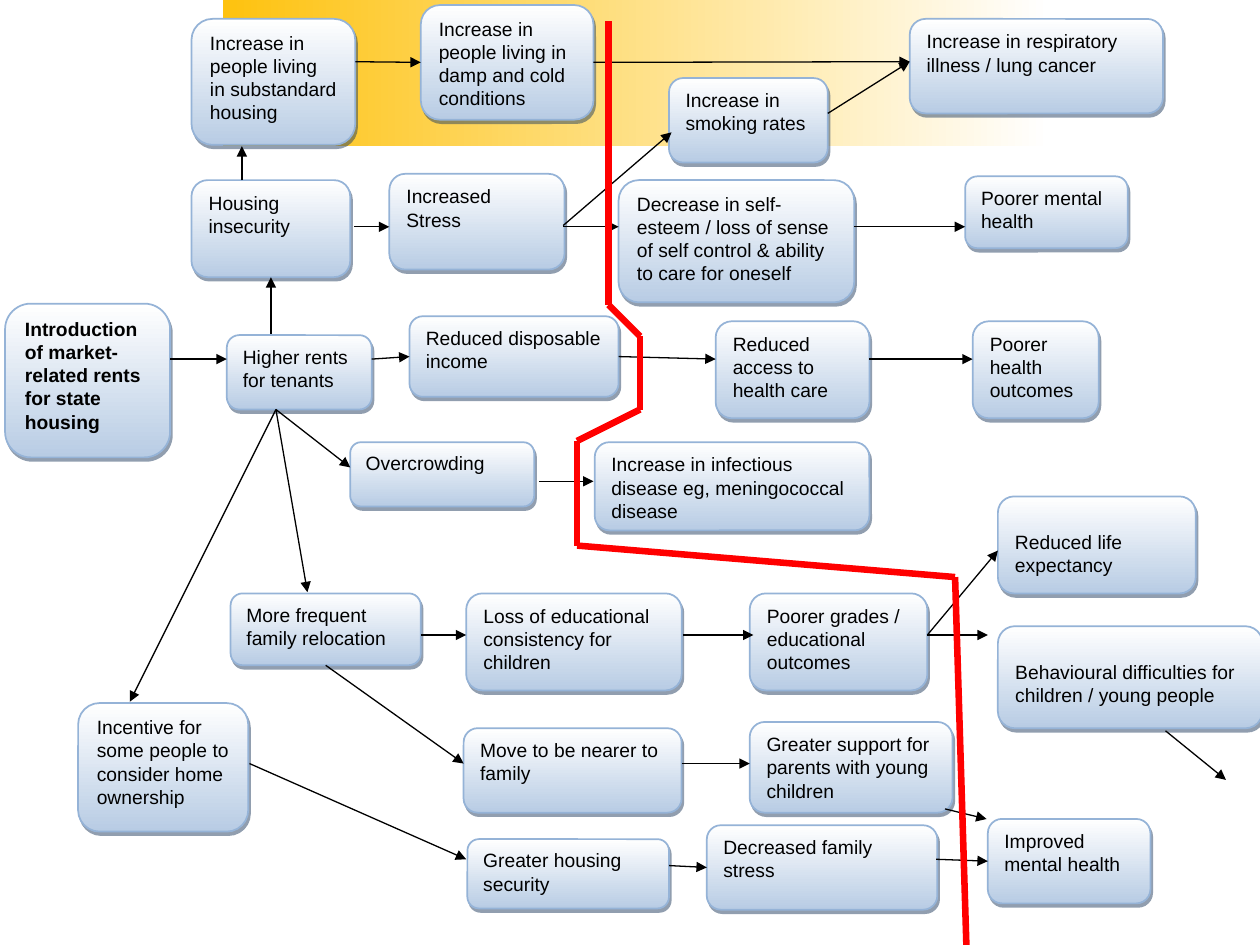
import itertools

import pptx
import pptx.dml.color
import pptx.enum.shapes
import pptx.enum.text
import pptx.oxml
import pptx.oxml.ns
import pptx.util
from pptx.util import Inches

COLOURS = {
    "gold": "FEC20F",
    "white": "FFFFFF",
    "box": "B8CCE4",
    "edge": "95B3D7",
    "shadow": "243F60",
    "ink": "000000",
    "divider": "FF0000",
}
NS = 'xmlns:a="http://schemas.openxmlformats.org/drawingml/2006/main"'
SHADOW = (
    f'<a:effectLst {NS}><a:outerShdw dist="28400" dir="3806000" algn="ctr" rotWithShape="0">'
    f'<a:srgbClr val="{COLOURS["shadow"]}"><a:alpha val="50000"/></a:srgbClr>'
    "</a:outerShdw></a:effectLst>"
)
ONE_LINE_DOWN = 0.23
JOIN_TOLERANCE = 0.02

BOXES = [
    ("Introduction of market-related rents for state housing", (0.04, 2.41, 1.31, 1.22)),
    ("Housing insecurity", (1.52, 1.43, 1.26, 0.77)),
    ("Higher rents for tenants", (1.8, 2.66, 1.15, 0.59)),
    ("Increase in people living in substandard housing", (1.52, 0.15, 1.3, 1)),
    ("Increased Stress", (3.09, 1.38, 1.39, 0.76)),
    ("Overcrowding", (2.78, 3.51, 1.46, 0.51)),
    ("More frequent family relocation", (1.83, 4.71, 1.51, 0.57)),
    ("Loss of educational consistency for children", (3.7, 4.71, 1.71, 0.77)),
    ("Increase in people living in damp and cold conditions", (3.34, 0.04, 1.37, 0.91)),
    ("Decrease in self-esteem / loss of sense of self control & ability to care for oneself",
     (4.91, 1.43, 1.87, 0.97)),
    ("Increase in infectious disease eg, meningococcal disease", (4.72, 3.51, 2.18, 0.7)),
    ("Reduced disposable income", (3.25, 2.51, 1.66, 0.64)),
    ("Reduced access to health care", (5.68, 2.55, 1.22, 0.77)),
    ("Poorer health outcomes", (7.72, 2.55, 1, 0.77)),
    ("Increase in respiratory illness / lung cancer", (7.22, 0.15, 2.01, 0.75)),
    ("Increase in smoking rates", (5.31, 0.62, 1.26, 0.67)),
    ("Poorer mental health", (7.66, 1.4, 1.29, 0.57)),
    ("Move to be nearer to family", (3.68, 5.78, 1.73, 0.67)),
    ("Decreased family stress", (5.61, 6.55, 1.83, 0.67)),
    ("Improved mental health", (7.84, 6.5, 1.29, 0.67)),
    ("Greater housing security", (3.71, 6.66, 1.6, 0.55)),
    ("Greater support for parents with young children", (5.95, 5.73, 1.61, 0.72)),
    ("Poorer grades / educational outcomes", (5.95, 4.71, 1.41, 0.77)),
    ("Behavioural difficulties for children / young people", (7.92, 4.97, 2.1, 0.81)),
    ("Reduced life expectancy", (7.92, 3.94, 1.57, 0.77)),
    ("Incentive for some people to consider home ownership", (0.62, 5.58, 1.35, 1.02)),
]
BOLD = {BOXES[0][0]}
LOWERED = {"Behavioural difficulties for children / young people", "Reduced life expectancy"}

ARROWS = [
    ((1.35, 2.85), (1.8, 2.85)), ((2.15, 2.65), (2.15, 2.2)),
    ((1.92, 1.43), (1.92, 1.16)), ((2.82, 0.49), (3.34, 0.49)),
    ((2.81, 1.8), (3.09, 1.8)), ((4.47, 1.8), (4.91, 1.8)),
    ((4.71, 0.49), (7.22, 0.49)), ((2.19, 3.25), (2.78, 3.71)),
    ((4.28, 3.82), (4.71, 3.82)), ((2.19, 3.25), (1.03, 5.57)),
    ((3.34, 5.04), (3.7, 5.04)), ((4.91, 2.85), (5.68, 2.85)),
    ((6.9, 2.85), (7.72, 2.85)), ((4.47, 1.79), (5.33, 1.05)),
    ((6.57, 0.9), (7.22, 0.49)), ((6.78, 1.8), (7.66, 1.8)),
    ((2.6, 5.28), (3.68, 6.06)), ((5.41, 6.06), (5.95, 6.06)),
    ((1.98, 6.06), (3.7, 6.82)), ((5.31, 6.87), (5.61, 6.87)),
    ((7.43, 6.82), (7.84, 6.82)), ((7.36, 5.04), (7.84, 5.04)),
    ((7.36, 5.04), (7.92, 4.37)), ((5.42, 5.04), (5.98, 5.04)),
    ((2.19, 3.25), (2.44, 4.7)), ((2.95, 2.85), (3.25, 2.85)),
    ((9.25, 5.8), (9.73, 6.19)), ((7.5, 6.42), (7.83, 6.5)),
]
DIVIDER = [
    (4.83, 0.17), (4.83, 2.42), (5.08, 2.67), (5.08, 3.25),
    (4.58, 3.5), (4.58, 4.33), (7.58, 4.58), (7.67, 7.5),
]


def rgb(name):
    """Return the named colour."""
    return pptx.dml.color.RGBColor.from_string(COLOURS[name])


def add_panel(page, kind, place, start, end, angle):
    """Add a shape filled with a two-colour gradient."""
    panel = page.shapes.add_shape(kind, *map(Inches, place))
    panel.shadow.inherit = False
    panel.fill.gradient()
    panel.fill.gradient_angle = angle
    for stop, name, position in zip(panel.fill.gradient_stops, (start, end), (0, 1)):
        stop.color.rgb = rgb(name)
        stop.position = position
    return panel


def add_band(page, place):
    """Add the gold band behind the top row."""
    band = add_panel(page, pptx.enum.shapes.MSO_SHAPE.RECTANGLE, place, "gold", "white", 0)
    band.line.fill.background()


def add_box(page, text, place):
    """Add one rounded cause or effect box with its text."""
    kind = pptx.enum.shapes.MSO_SHAPE.FLOWCHART_ALTERNATE_PROCESS
    box = add_panel(page, kind, place, "white", "box", 270)
    box.line.color.rgb = rgb("edge")
    box.line.width = pptx.util.Pt(1)
    properties = box._element.spPr
    properties.remove(properties.find(pptx.oxml.ns.qn("a:effectLst")))
    properties.append(pptx.oxml.parse_xml(SHADOW))
    frame = box.text_frame
    frame.word_wrap = True
    frame.vertical_anchor = pptx.enum.text.MSO_ANCHOR.TOP
    if text in LOWERED:
        frame.margin_top = Inches(ONE_LINE_DOWN)
    para = frame.paragraphs[0]
    para.alignment = pptx.enum.text.PP_ALIGN.LEFT
    span = para.add_run()
    span.text = text
    span.font.name = "Arial"
    span.font.size = pptx.util.Pt(11)
    span.font.bold = text in BOLD
    span.font.color.rgb = rgb("ink")
    return box


def add_line(page, start, end, colour, width):
    """Add a straight line between two points."""
    kind = pptx.enum.shapes.MSO_CONNECTOR.STRAIGHT
    line = page.shapes.add_connector(kind, *map(Inches, start + end))
    line.line.color.rgb = rgb(colour)
    line.line.width = pptx.util.Pt(width)
    line._element.spPr.append(pptx.oxml.parse_xml(f"<a:effectLst {NS}/>"))
    return line


def find_side(boxes, point):
    """Return the box and side whose middle is at the point, if any."""
    reach = Inches(JOIN_TOLERANCE)
    x, y = map(Inches, point)
    for box in boxes:
        middle, centre = box.left + box.width // 2, box.top + box.height // 2
        sides = [(middle, box.top), (box.left, centre),
                 (middle, box.top + box.height), (box.left + box.width, centre)]
        for side, (left, top) in enumerate(sides):
            if abs(left - x) <= reach and abs(top - y) <= reach:
                return box, side
    return None


def add_arrow(page, boxes, start, end):
    """Add an arrow, joined to a box wherever it meets the middle of a side."""
    arrow = add_line(page, start, end, "ink", 0.75)
    head = pptx.oxml.parse_xml(f'<a:tailEnd {NS} type="triangle"/>')
    arrow.line._get_or_add_ln().append(head)
    for point, join in ((start, arrow.begin_connect), (end, arrow.end_connect)):
        found = find_side(boxes, point)
        if found:
            join(*found)


def add_divider(page, points):
    """Add the thick red line that separates causes from health effects."""
    for start, end in itertools.pairwise(points):
        add_line(page, start, end, "divider", 3.75)


def main():
    """Build the slide and save it."""
    deck = pptx.Presentation()
    deck.slide_width, deck.slide_height = Inches(10), Inches(7.5)
    page = deck.slides.add_slide(deck.slide_layouts[6])
    add_band(page, (1.77, 0, 6.56, 1.16))
    boxes = [add_box(page, text, place) for text, place in BOXES]
    for start, end in ARROWS:
        add_arrow(page, boxes, start, end)
    add_divider(page, DIVIDER)
    deck.save("out.pptx")


if __name__ == "__main__":
    main()
